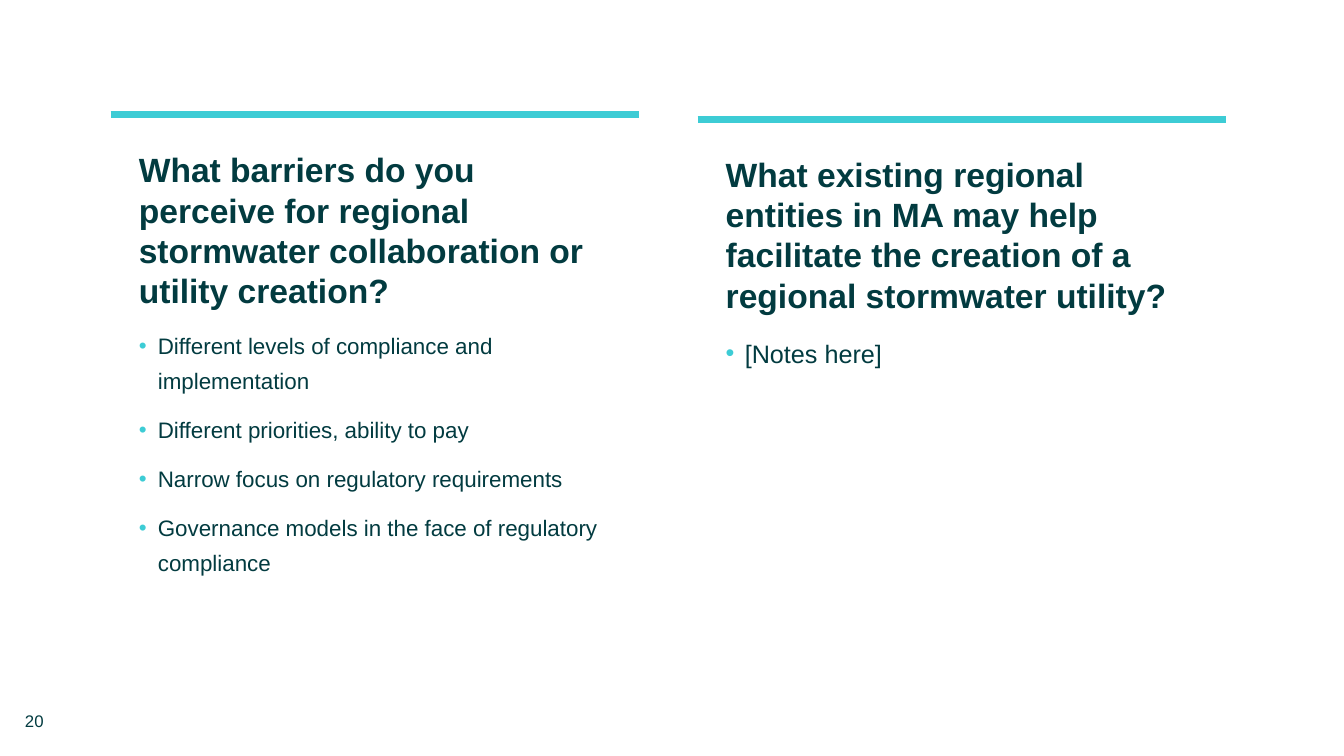
import pptx
import pptx.dml.color
import pptx.enum.shapes
import pptx.enum.text
import pptx.util
import lxml.etree
from pptx.oxml.ns import qn

COLORS = {"ink": "023B40", "accent": "3DCCD5", "paper": "FFFFFF"}
PANEL_WIDTH = 13.31
PANEL_BOTTOM = 16.8
RULE_OFFSET = 0.12
PANELS = [
    (2.79, 2.77, 16,
     "What barriers do you perceive for regional stormwater collaboration or utility creation?",
     ["Different levels of compliance and implementation",
      "Different priorities, ability to pay",
      "Narrow focus on regulatory requirements",
      "Governance models in the face of regulatory compliance"]),
    (17.58, 2.88, 18,
     "What existing regional entities in MA may help facilitate the creation of a regional stormwater utility?",
     ["[Notes here]"]),
]


class QuestionSlide:
    """Draws question panels in one shared style on a slide."""

    def __init__(self, slide, font="Arial"):
        self.slide = slide
        self.font = font

    def color(self, name):
        return pptx.dml.color.RGBColor.from_string(COLORS[name])

    def format_runs(self, para, size, bold=False):
        for span in para.runs:
            span.font.name = self.font
            span.font.size = pptx.util.Pt(size)
            span.font.bold = bold
            span.font.color.rgb = self.color("ink")

    def bullet(self, para):
        properties = para._p.get_or_add_pPr()
        indent = pptx.util.Cm(0.48)
        properties.set("marL", str(indent))
        properties.set("indent", str(-indent))
        bullet_color = lxml.etree.SubElement(properties, qn("a:buClr"))
        lxml.etree.SubElement(bullet_color, qn("a:srgbClr"), val=COLORS["accent"])
        lxml.etree.SubElement(properties, qn("a:buFont"), typeface=self.font)
        lxml.etree.SubElement(properties, qn("a:buChar"), char="•")

    def panel(self, left, top, size, question, answers):
        box = self.slide.shapes.add_shape(
            pptx.enum.shapes.MSO_SHAPE.RECTANGLE,
            pptx.util.Cm(left), pptx.util.Cm(top),
            pptx.util.Cm(PANEL_WIDTH), pptx.util.Cm(PANEL_BOTTOM - top))
        box.shadow.inherit = False
        box.fill.solid()
        box.fill.fore_color.rgb = self.color("paper")
        box.line.fill.background()
        frame = box.text_frame
        frame.word_wrap = True
        frame.vertical_anchor = pptx.enum.text.MSO_ANCHOR.TOP
        frame.margin_left = frame.margin_right = pptx.util.Cm(0.71)
        frame.margin_top = pptx.util.Cm(0.99)
        frame.margin_bottom = pptx.util.Cm(0.13)
        frame.text = "\n".join([question, *answers])
        for para in frame.paragraphs:
            para.alignment = pptx.enum.text.PP_ALIGN.LEFT
            para.space_before = pptx.util.Pt(10)
        heading, *items = frame.paragraphs
        self.format_runs(heading, 24, bold=True)
        for para in items:
            para.line_spacing = 1.3
            self.bullet(para)
            self.format_runs(para, size)

    def rule(self, left, top):
        height = pptx.util.Cm(top)
        line = self.slide.shapes.add_connector(
            pptx.enum.shapes.MSO_CONNECTOR.STRAIGHT,
            pptx.util.Cm(left), height, pptx.util.Cm(left + PANEL_WIDTH), height)
        line.line.color.rgb = self.color("accent")
        line.line.width = pptx.util.Pt(5)
        lxml.etree.SubElement(line._element.spPr, qn("a:effectLst"))

    def page_number(self, number):
        box = self.slide.shapes.add_textbox(
            pptx.util.Cm(0.38), pptx.util.Cm(17.65), pptx.util.Cm(7.62), pptx.util.Cm(1.02))
        box.text_frame.word_wrap = True
        box.text_frame.vertical_anchor = pptx.enum.text.MSO_ANCHOR.MIDDLE
        box.text_frame.text = number
        self.format_runs(box.text_frame.paragraphs[0], 12)


def main():
    deck = pptx.Presentation()
    deck.slide_width = pptx.util.Cm(33.87)
    deck.slide_height = pptx.util.Cm(19.05)
    page = QuestionSlide(deck.slides.add_slide(deck.slide_layouts[6]))
    page.page_number("20")
    for left, top, size, question, answers in PANELS:
        page.panel(left, top, size, question, answers)
        page.rule(left, top + RULE_OFFSET)
    deck.save("out.pptx")


if __name__ == "__main__":
    main()
